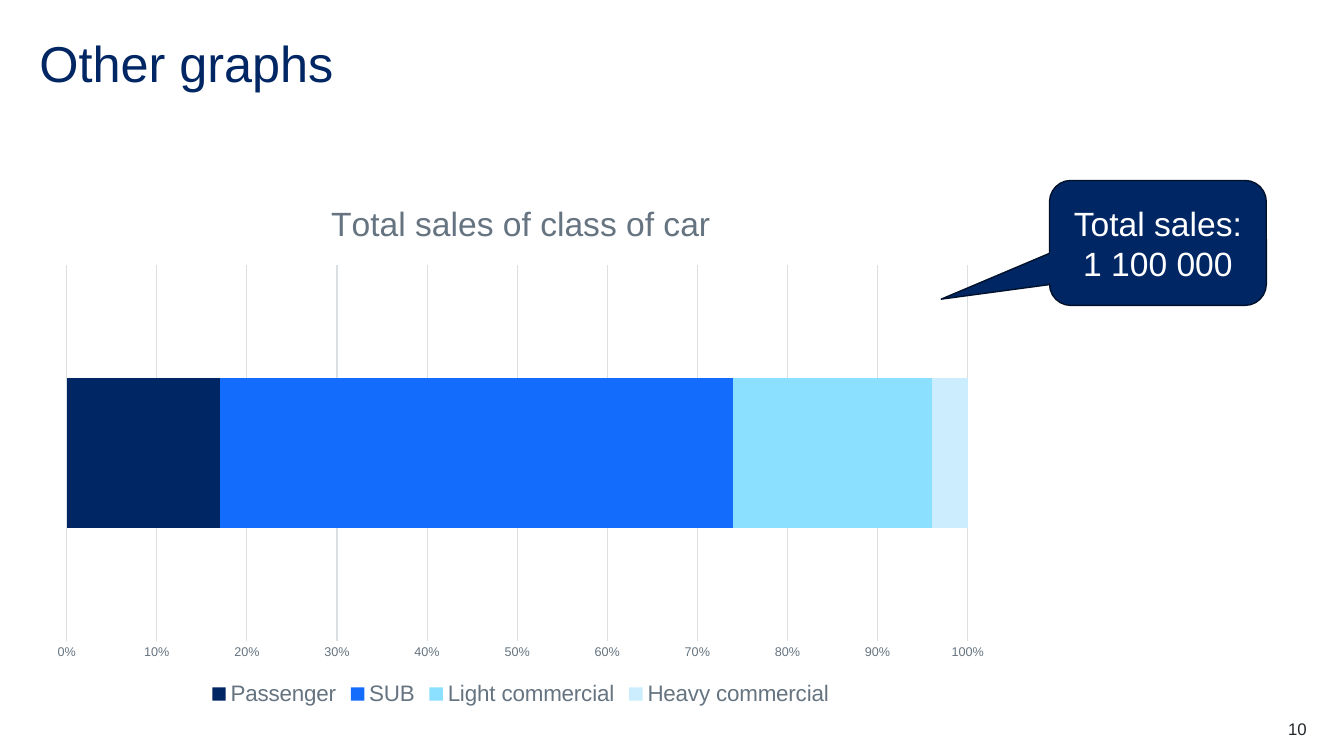
import dataclasses
import typing

import pptx
import pptx.chart.data
import pptx.dml.color
import pptx.enum.chart
import pptx.enum.shapes
import pptx.enum.text
import pptx.util

Align = pptx.enum.text.PP_ALIGN
Anchor = pptx.enum.text.MSO_ANCHOR
Pt = pptx.util.Pt
WIDE = pptx.util.Inches(13.33)
HIGH = pptx.util.Inches(7.5)


@dataclasses.dataclass(frozen=True)
class Theme:
    face: str = "Arial"
    navy: str = "002664"
    blue: str = "146CFD"
    sky: str = "8CE0FF"
    pale: str = "CBEDFD"
    edge: str = "00112C"
    gray: str = "657480"
    grid: str = "DBDFE2"
    ink: str = "22272B"
    white: str = "FFFFFF"
    head: float = 36
    large: float = 24
    key: float = 16
    note: float = 12
    base: float = 10
    tick: float = 9


@dataclasses.dataclass(frozen=True)
class Box:
    """Left, top, width and height in percent of the slide."""

    left: float
    top: float
    width: float
    height: float

    def place(self) -> typing.Tuple[int, int, int, int]:
        return (
            round(WIDE * self.left / 100),
            round(HIGH * self.top / 100),
            round(WIDE * self.width / 100),
            round(HIGH * self.height / 100),
        )


@dataclasses.dataclass(frozen=True)
class Class:
    name: str
    share: int
    color: str


THEME = Theme()
CARS = [
    Class("Passenger", 17, THEME.navy),
    Class("SUB", 57, THEME.blue),
    Class("Light commercial", 22, THEME.sky),
    Class("Heavy commercial", 4, THEME.pale),
]


def tint(code: str) -> pptx.dml.color.RGBColor:
    return pptx.dml.color.RGBColor.from_string(code)


def style(font: typing.Any, size: float, color: str) -> None:
    font.name = THEME.face
    font.size = Pt(size)
    font.bold = False
    font.color.rgb = tint(color)


def write(shape: typing.Any, text: str, size: float, color: str,
          align: Align, anchor: Anchor, inset: bool = False) -> None:
    frame = shape.text_frame
    frame.word_wrap = True
    frame.auto_size = pptx.enum.text.MSO_AUTO_SIZE.NONE
    frame.vertical_anchor = anchor
    if not inset:
        frame.margin_left = frame.margin_right = 0
        frame.margin_top = frame.margin_bottom = 0
    frame.text = text
    line = frame.paragraphs[0]
    line.alignment = align
    style(line.font, size, color)


def add_title(slide: typing.Any, text: str, box: Box) -> None:
    title = slide.shapes.title
    title.left, title.top, title.width, title.height = box.place()
    write(title, text, THEME.head, THEME.navy, Align.LEFT, Anchor.TOP)
    title.text_frame.paragraphs[0].line_spacing = 0.9


def add_sales(slide: typing.Any, text: str, box: Box) -> None:
    data = pptx.chart.data.CategoryChartData()
    data.categories = ["1"]
    for car in CARS:
        data.add_series(car.name, [car.share])
    kind = pptx.enum.chart.XL_CHART_TYPE.BAR_STACKED_100
    chart = slide.shapes.add_chart(kind, *box.place(), data).chart
    style(chart.font, THEME.base, THEME.ink)

    chart.has_title = True
    chart.chart_title.include_in_layout = False
    chart.chart_title.text_frame.text = text
    style(chart.chart_title.text_frame.paragraphs[0].font, THEME.large, THEME.gray)

    chart.has_legend = True
    chart.legend.position = pptx.enum.chart.XL_LEGEND_POSITION.BOTTOM
    chart.legend.include_in_layout = False
    style(chart.legend.font, THEME.key, THEME.gray)

    plot = chart.plots[0]
    plot.gap_width = 150
    plot.overlap = 100
    plot.vary_by_categories = False
    for bar, car in zip(plot.series, CARS):
        bar.format.fill.solid()
        bar.format.fill.fore_color.rgb = tint(car.color)

    chart.category_axis.visible = False
    axis = chart.value_axis
    axis.major_tick_mark = pptx.enum.chart.XL_TICK_MARK.NONE
    axis.minor_tick_mark = pptx.enum.chart.XL_TICK_MARK.NONE
    axis.format.line.fill.background()
    axis.tick_labels.number_format = "0%"
    axis.tick_labels.number_format_is_linked = False
    style(axis.tick_labels.font, THEME.tick, THEME.gray)
    axis.has_major_gridlines = True
    line = axis.major_gridlines.format.line
    line.color.rgb = tint(THEME.grid)
    line.width = Pt(0.75)


def add_total(slide: typing.Any, text: str, box: Box) -> None:
    kind = pptx.enum.shapes.MSO_SHAPE.ROUNDED_RECTANGULAR_CALLOUT
    bubble = slide.shapes.add_shape(kind, *box.place())
    for spot, value in enumerate((-1, 0.45, 0.17)):
        bubble.adjustments[spot] = value
    bubble.shadow.inherit = False
    bubble.fill.solid()
    bubble.fill.fore_color.rgb = tint(THEME.navy)
    bubble.line.color.rgb = tint(THEME.edge)
    bubble.line.width = Pt(1)
    write(bubble, text, THEME.large, THEME.white, Align.CENTER, Anchor.MIDDLE, True)


def add_number(slide: typing.Any, text: str, box: Box) -> None:
    label = slide.shapes.add_textbox(*box.place())
    write(label, text, THEME.note, THEME.ink, Align.RIGHT, Anchor.TOP)


def main() -> None:
    deck = pptx.Presentation()
    deck.slide_width, deck.slide_height = WIDE, HIGH
    slide = deck.slides.add_slide(deck.slide_layouts.get_by_name("Title Only"))
    add_title(slide, "Other graphs", Box(2.93, 5.2, 94.22, 8))
    add_sales(slide, "Total sales of class of car", Box(2.85, 23.87, 71.79, 70.13))
    add_total(slide, "Total sales: 1 100 000", Box(78.09, 23.87, 16.13, 16.53))
    add_number(slide, "10", Box(91.3, 95.07, 5.93, 2.67))
    deck.save("out.pptx")


if __name__ == "__main__":
    main()
